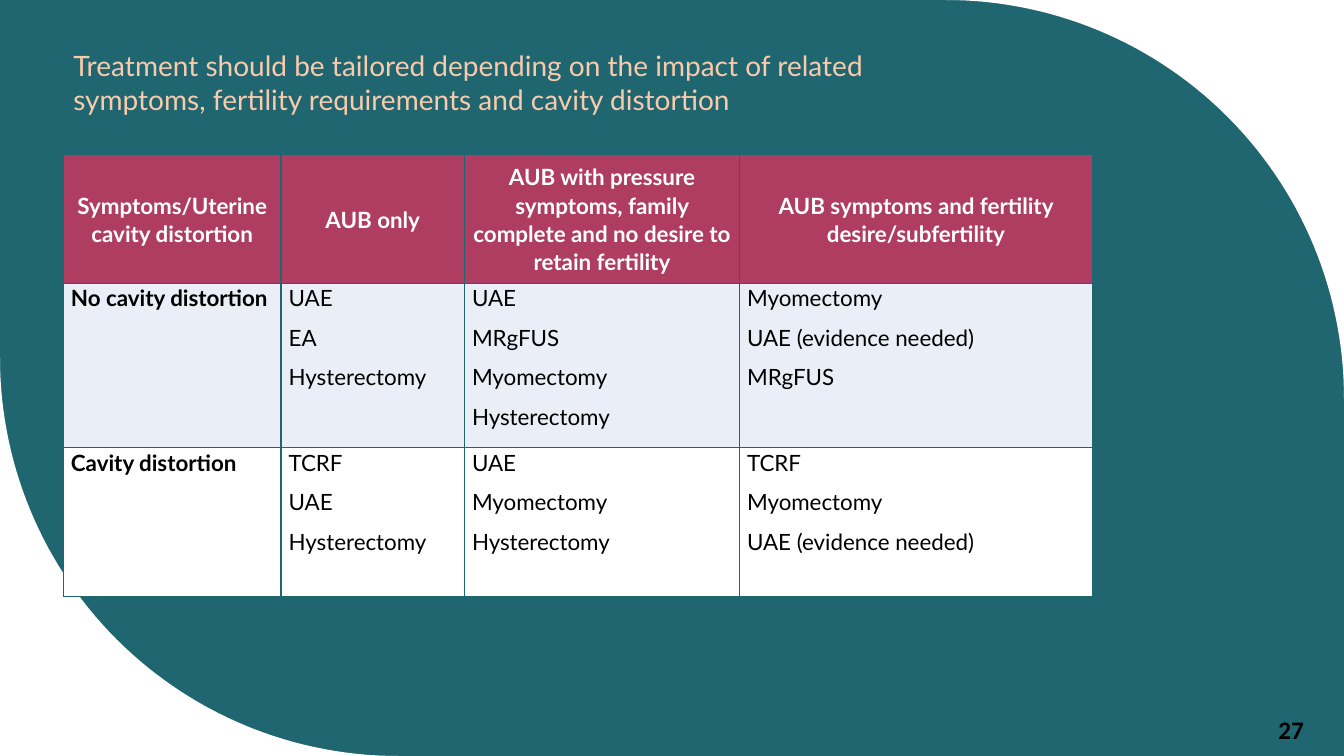
import math

import lxml.etree
import pptx
import pptx.dml.color
import pptx.enum.text
import pptx.oxml.ns
import pptx.util

Pt = pptx.util.Pt
Align = pptx.enum.text.PP_ALIGN
Anchor = pptx.enum.text.MSO_ANCHOR

COLORS = {
    "teal": "206670",
    "white": "FFFFFF",
    "peach": "F8CBAD",
    "berry": "AF3D61",
    "pale": "EAEFF7",
    "black": "000000",
}
WIDTH, HEIGHT = 960, 540


def paint(fill, color):
    fill.solid()
    fill.fore_color.rgb = pptx.dml.color.RGBColor.from_string(COLORS[color])


def add_span(para, text, size, color, font="Lato", bold=False):
    span = para.add_run()
    span.text = text
    span.font.size = Pt(size)
    span.font.name = font
    span.font.bold = bold
    paint(span.font.fill, color)


deck = pptx.Presentation()
deck.slide_width, deck.slide_height = Pt(WIDTH), Pt(HEIGHT)
page = deck.slides.add_slide(deck.slide_layouts[6])
paint(page.background.fill, "teal")

# White corners, each cut by a quarter circle
RADIUS, STEPS = 284.4, 60
corners = [(WIDTH, 0, 1, -1), (0, HEIGHT, -1, 1)]
for corner_x, corner_y, side_x, side_y in corners:
    center_x = corner_x - side_x * RADIUS
    center_y = corner_y - side_y * RADIUS
    arc = []
    for step in range(STEPS + 1):
        angle = math.pi / 2 * step / STEPS
        arc.append((Pt(center_x + side_x * RADIUS * math.sin(angle)),
                    Pt(center_y + side_y * RADIUS * math.cos(angle))))
    builder = page.shapes.build_freeform(Pt(corner_x), Pt(corner_y))
    builder.add_line_segments(arc, close=True)
    corner = builder.convert_to_shape()
    corner.shadow.inherit = False
    paint(corner.fill, "white")
    corner.line.fill.background()

# Treatment table
headings = [
    "Symptoms/Uterine cavity distortion",
    "AUB only",
    "AUB with pressure symptoms, family complete and no desire to retain fertility",
    "AUB symptoms and fertility desire/subfertility",
]
rows = [
    [[heading] for heading in headings],
    [
        ["No cavity distortion"],
        ["UAE", "EA", "Hysterectomy"],
        ["UAE", "MRgFUS", "Myomectomy", "Hysterectomy"],
        ["Myomectomy", "UAE (evidence needed)", "MRgFUS"],
    ],
    [
        ["Cavity distortion"],
        ["TCRF", "UAE", "Hysterectomy"],
        ["UAE", "Myomectomy", "Hysterectomy"],
        ["TCRF", "Myomectomy", "UAE (evidence needed)"],
    ],
]
row_fills = ["berry", "pale", "white"]
row_heights = [92, 117.5, 106.5]
column_widths = [155.5, 131, 196.5, 252]

frame = page.shapes.add_table(len(rows), len(headings), Pt(45.3), Pt(110.3),
                              Pt(sum(column_widths)), Pt(sum(row_heights)))
table = frame.table
table.first_row = False
table.horz_banding = False
for column, width in zip(table.columns, column_widths):
    column.width = Pt(width)
for row, height in zip(table.rows, row_heights):
    row.height = Pt(height)

for row_index, row in enumerate(rows):
    is_header = row_index == 0
    for column_index, entries in enumerate(row):
        cell = table.cell(row_index, column_index)
        paint(cell.fill, row_fills[row_index])
        cell.margin_left = cell.margin_right = Pt(5.4)
        cell.margin_top = cell.margin_bottom = 0
        cell.vertical_anchor = Anchor.MIDDLE if is_header else Anchor.TOP
        for entry_index, entry in enumerate(entries):
            body = cell.text_frame
            para = body.paragraphs[0] if entry_index == 0 else body.add_paragraph()
            para.alignment = Align.CENTER if is_header else Align.LEFT
            para.line_spacing = 1.06
            para.space_after = Pt(8)
            add_span(para, entry, 16, "white" if is_header else "black",
                     bold=is_header or column_index == 0)
        # Borders come before the fill in the cell properties
        properties = cell._tc.get_or_add_tcPr()
        for place, side in enumerate(["lnL", "lnR", "lnT", "lnB"]):
            border = lxml.etree.Element(pptx.oxml.ns.qn("a:" + side), w=str(Pt(1)))
            solid = lxml.etree.SubElement(border, pptx.oxml.ns.qn("a:solidFill"))
            lxml.etree.SubElement(solid, pptx.oxml.ns.qn("a:srgbClr"), val=COLORS["teal"])
            properties.insert(place, border)

# Title
box = page.shapes.add_textbox(Pt(45.3), Pt(23), Pt(590.4), Pt(71.3))
box.text_frame.word_wrap = True
box.text_frame.vertical_anchor = Anchor.MIDDLE
add_span(box.text_frame.paragraphs[0],
         "Treatment should be tailored depending on the impact of related symptoms, "
         "fertility requirements and cavity distortion", 20, "peach")

# Page number
box = page.shapes.add_textbox(Pt(868.3), Pt(509), Pt(108), Pt(42.5))
box.text_frame.word_wrap = True
para = box.text_frame.paragraphs[0]
para.alignment = Align.CENTER
para.line_spacing = 0.9
add_span(para, "27", 18, "black", font="Calibri", bold=True)

deck.save("out.pptx")
